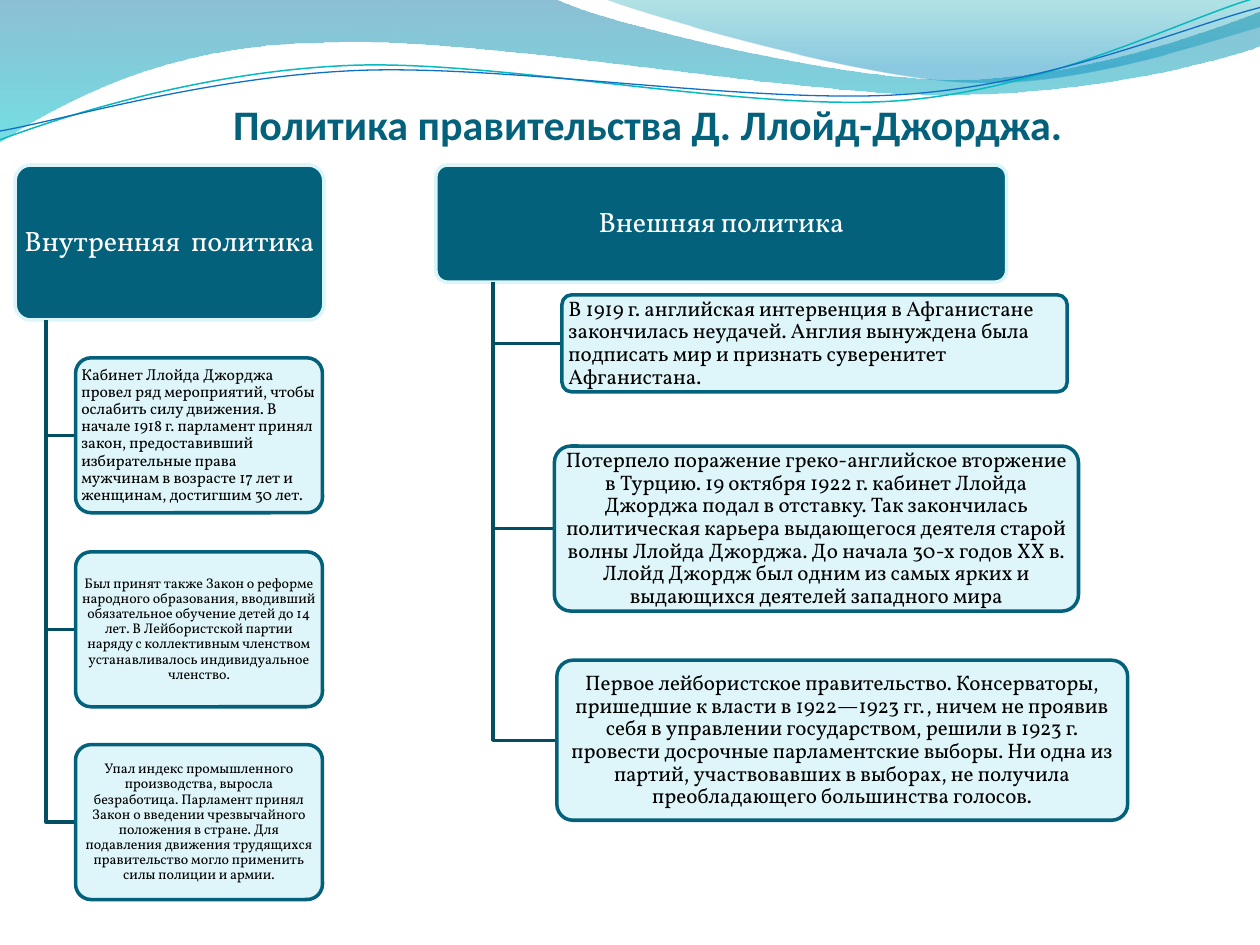
from lxml import etree
from pptx import Presentation, util as u
from pptx.dml.color import RGBColor
from pptx.enum import shapes, text
from pptx.oxml.ns import qn

THEME = dict(
    dark="04617B", pale="DBF5F9", link="034E63", white="FFFFFF", black="000000",
    title_font="Calibri", body_font="Vollkorn", title_size=24, head_size=16,
    line=2, pale_alpha=90, corner=0.1,
)
LEFT, CENTER = text.PP_ALIGN.LEFT, text.PP_ALIGN.CENTER

TITLE = "Политика правительства Д. Ллойд-Джорджа."

# Boxes are (left, top, width, height); items are (box, size, alignment, text).
BRANCHES = [
    dict(
        head="Внутренняя  политика", box=(0.12, 1.31, 2.45, 1.23), inset=(0.01, 0.01),
        items=[
            ((0.6, 2.84, 1.96, 1.23), 9, LEFT,
             "Кабинет Ллойда Джорджа провел ряд мероприятий, чтобы ослабить силу движения. "
             "В начале 1918 г. парламент принял закон, предоставивший избирательные права "
             "мужчинам в возрасте 17 лет и женщинам, достигшим 30 лет."),
            ((0.6, 4.38, 1.96, 1.23), 8, CENTER,
             "Был принят также Закон о реформе народного образования, вводивший обязательное "
             "обучение детей до 14 лет. В Лейбористской партии наряду с коллективным "
             "членством устанавливалось индивидуальное членство."),
            ((0.6, 5.91, 1.96, 1.23), 8, CENTER,
             "Упал индекс промышленного производства, выросла безработица. Парламент принял "
             "Закон о введении чрезвычайного положения в стране. Для подавления движения "
             "трудящихся правительство могло применить силы полиции и армии."),
        ]),
    dict(
        head="Внешняя политика", box=(3.46, 1.31, 4.53, 0.93), inset=(0.03, 0.02),
        items=[
            ((4.46, 2.34, 4.01, 0.77), 12, LEFT,
             "В 1919 г. английская интервенция в Афганистане закончилась неудачей. Англия "
             "вынуждена была подписать мир и признать суверенитет Афганистана."),
            ((4.4, 3.54, 4.16, 1.31), 12, CENTER,
             "Потерпело поражение греко-английское вторжение в Турцию. 19 октября 1922 г. "
             "кабинет Ллойда Джорджа подал в отставку. Так закончилась политическая карьера "
             "выдающегося деятеля старой волны Ллойда Джорджа. До начала 30-х годов XX в. "
             "Ллойд Джордж был одним из самых ярких и выдающихся деятелей западного мира"),
            ((4.42, 5.24, 4.53, 1.27), 12, CENTER,
             "Первое лейбористское правительство. Консерваторы, пришедшие к власти в "
             "1922—1923 гг., ничем не проявив себя в управлении государством, решили в "
             "1923 г. провести досрочные парламентские выборы. Ни одна из партий, "
             "участвовавших в выборах, не получила преобладающего большинства голосов."),
        ]),
]

# A path step is one point (straight) or three points (Bezier curve).
# Gradient stops are (position, colour, opacity in percent).
WAVES = [
    dict(start=(0, -0.01), steps=[
        [(4.4, -0.01)],
        [(4.76, 0.17), (6.64, 0.63), (7.58, 0.63)],
        [(8.53, 0.63), (9.58, 0.26), (10, 0.09)],
        [(10.01, 0.36)],
        [(9.83, 0.44), (8.7, 0.76), (7.46, 0.75)],
        [(6.22, 0.75), (3.82, 0.28), (2.57, 0.34)],
        [(1.29, 0.35), (0.46, 0.83), (-0.01, 1.13)],
    ], stops=[(0, "0074A1", 45), (1, "00C6CF", 55)]),
    dict(start=(4.79, -0.01), steps=[
        [(5.09, 0.11), (6.82, 0.62), (7.69, 0.65)],
        [(8.56, 0.69), (9.61, 0.32), (10, 0.21)],
        [(10, 0)],
    ], stops=[(0, "00A1A9", 30), (0.8, "008BBF", 45)]),
    dict(start=(0, 1.11), steps=[
        [(0.48, 0.93), (1.58, 0.57), (2.77, 0.52)],
        [(3.95, 0.47), (5.93, 0.89), (7.13, 0.8)],
        [(8.33, 0.71), (9.38, 0.15), (9.98, -0.02)],
    ], line=("0AB8BF", 0.85)),
    dict(start=(0, 1.04), steps=[
        [(0.47, 0.96), (1.64, 0.61), (2.83, 0.56)],
        [(4.03, 0.51), (5.97, 0.83), (7.17, 0.75)],
        [(8.36, 0.67), (9.41, 0.21), (10, 0.06)],
    ], line=("0F6FC6", 0.75)),
]


def rgb(name):
    return RGBColor.from_string(THEME.get(name, name))


def set_line(line, color, width):
    line.color.rgb = rgb(color)
    line.width = u.Pt(width)


def set_alpha(sp, *percents):
    """Give the fill colours of a shape, in order, their opacity."""
    for clr, percent in zip(sp._element.spPr.iter(qn("a:srgbClr")), percents):
        etree.SubElement(clr, qn("a:alpha")).set("val", str(percent * 1000))


def add_outline(s, start, steps, close=False):
    """Build a freeform of straight steps, then bend those that are curves."""
    builder = s.shapes.build_freeform(*map(u.Inches, start))
    ends = [tuple(map(u.Inches, step[-1])) for step in steps]
    builder.add_line_segments(ends, close=close)
    sp = builder.convert_to_shape()
    sp.shadow.inherit = False
    segments = list(sp._element.spPr.iter(qn("a:lnTo")))
    for segment, step in zip(segments, steps):
        if len(step) == 3:
            curve = etree.Element(qn("a:cubicBezTo"))
            for x, y in step:
                pt = etree.SubElement(curve, qn("a:pt"))
                pt.set("x", str(u.Inches(x) - sp.left))
                pt.set("y", str(u.Inches(y) - sp.top))
            segment.getparent().replace(segment, curve)
    return sp


def add_wave(s, start, steps, stops=None, line=None):
    sp = add_outline(s, start, steps, close=bool(stops))
    if line:
        sp.fill.background()
        set_line(sp.line, *line)
        return
    sp.line.fill.background()
    sp.fill.gradient()
    sp.fill.gradient_angle = 270
    for stop, (position, color, _) in zip(sp.fill.gradient_stops, stops):
        stop.position = position
        stop.color.rgb = rgb(color)
    set_alpha(sp, *(alpha for *_, alpha in stops))


def add_text(s, box, content, font, size, color, align, anchor, inset):
    tf = s.shapes.add_textbox(*map(u.Inches, box)).text_frame
    tf.word_wrap = True
    tf.vertical_anchor = anchor
    tf.margin_left = tf.margin_right = u.Inches(inset[0])
    tf.margin_top = tf.margin_bottom = u.Inches(inset[1])
    p = tf.paragraphs[0]
    p.text = content
    p.alignment = align
    p.font.name, p.font.size = font, u.Pt(size)
    p.font.color.rgb = rgb(color)
    return p


def add_box(s, box, content, size, align, inset, fill, line, color):
    """Draw a rounded box and its text, kept inside the curve of the corners."""
    sp = s.shapes.add_shape(shapes.MSO_SHAPE.ROUNDED_RECTANGLE, *map(u.Inches, box))
    sp.adjustments[0] = THEME["corner"]
    sp.shadow.inherit = False
    sp.fill.solid()
    sp.fill.fore_color.rgb = rgb(fill)
    set_line(sp.line, line, THEME["line"])
    x, y, w, h = box
    pad = 0.29 * THEME["corner"] * min(w, h)
    p = add_text(s, (x + pad, y + pad, w - 2 * pad, h - 2 * pad), content,
                 THEME["body_font"], size, color, align, text.MSO_ANCHOR.MIDDLE, inset)
    p.line_spacing = 0.9
    return sp


def add_branch(s, head, box, inset, items):
    """Draw a heading with its items hanging from a trunk a tenth of the way in."""
    left, top, width, height = box
    trunk, bottom = left + width / 10, top + height
    add_box(s, box, head, THEME["head_size"], CENTER, (0.03, 0.02), "dark", "pale", "white")
    for item_box, size, align, content in items:
        x, y, _, h = item_box
        elbow = add_outline(s, (trunk, bottom), [[(trunk, y + h / 2)], [(x, y + h / 2)]])
        elbow.fill.background()
        set_line(elbow.line, "link", THEME["line"])
        sp = add_box(s, item_box, content, size, align, inset, "pale", "dark", "black")
        set_alpha(sp, THEME["pale_alpha"])


def main():
    prs = Presentation()
    prs.slide_width, prs.slide_height = u.Inches(10), u.Inches(7.5)
    s = prs.slides.add_slide(prs.slide_layouts[6])
    for wave in WAVES:
        add_wave(s, **wave)
    title = add_text(s, (1.85, 0.29, 8.1, 0.94), TITLE, THEME["title_font"],
                     THEME["title_size"], "dark", LEFT, text.MSO_ANCHOR.BOTTOM, (0, 0.05))
    title.font.bold = True
    for branch in BRANCHES:
        add_branch(s, **branch)
    prs.save("out.pptx")


if __name__ == "__main__":
    main()
